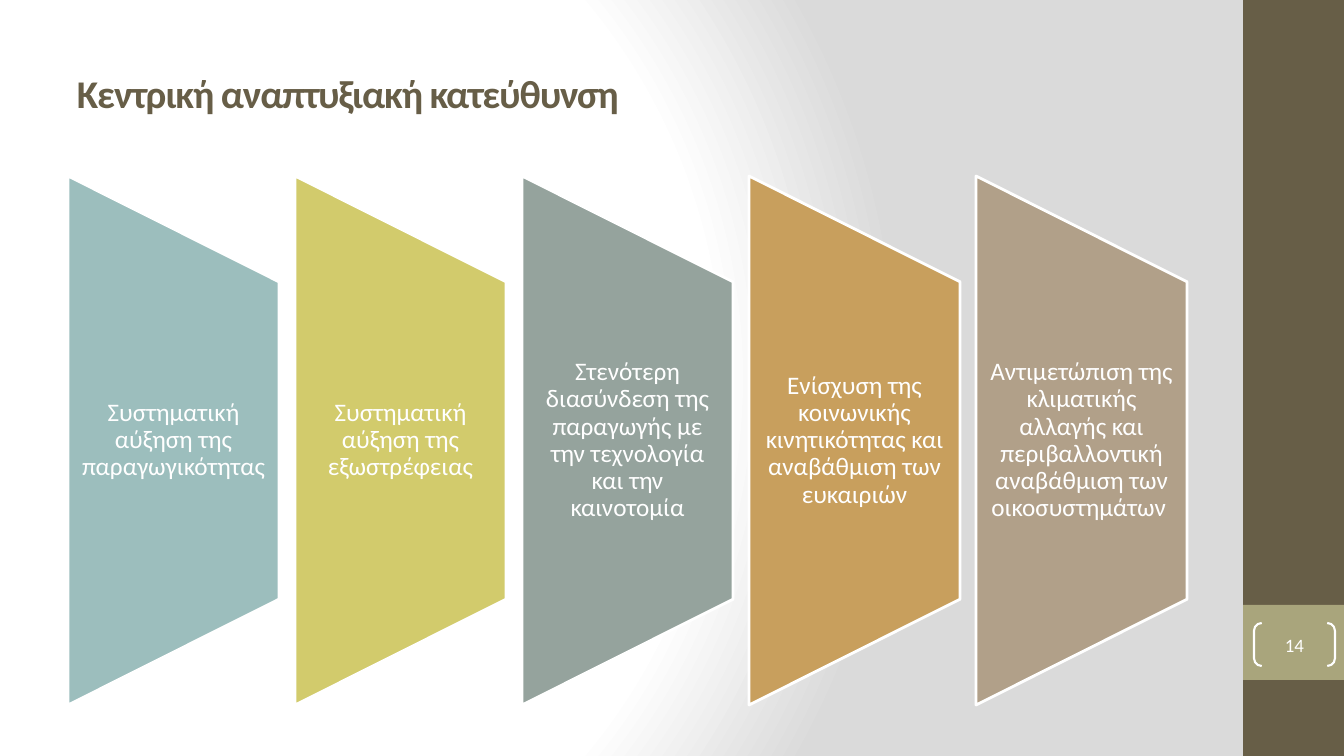
import pptx
import pptx.util
import pptx.dml.color
import pptx.enum.shapes
import pptx.enum.text
import pptx.oxml
import pptx.oxml.ns

PX = 914400 / 100.8
SHAPES = pptx.enum.shapes.MSO_SHAPE
CENTER = pptx.enum.text.PP_ALIGN.CENTER
MIDDLE = pptx.enum.text.MSO_ANCHOR.MIDDLE
DIRECTIONS = [
    ("9CBEBD", "Συστηματική αύξηση της παραγωγικότητας"),
    ("D2CB6C", "Συστηματική αύξηση της εξωστρέφειας"),
    ("95A39D", "Στενότερη διασύνδεση της παραγωγής με την τεχνολογία και την καινοτομία"),
    ("C89F5D", "Ενίσχυση της κοινωνικής κινητικότητας και αναβάθμιση των ευκαιριών"),
    ("B1A089", "Αντιμετώπιση της κλιματικής αλλαγής και περιβαλλοντική αναβάθμιση των οικοσυστημάτων "),
]


def px(n):
    return pptx.util.Emu(round(n * PX))


def color(value):
    return pptx.dml.color.RGBColor.from_string(value)


def add_box(s, kind, x, y, w, h, fill=None, line=None, line_pt=1):
    sp = s.shapes.add_shape(kind, px(x), px(y), px(w), px(h))
    sp.shadow.inherit = False
    if fill:
        sp.fill.solid()
        sp.fill.fore_color.rgb = color(fill)
    else:
        sp.fill.background()
    if line:
        sp.line.color.rgb = color(line)
        sp.line.width = pptx.util.Pt(line_pt)
    else:
        sp.line.fill.background()
    return sp


def set_text(sp, text, size, ink, inset_x, inset_y, align=None):
    tf = sp.text_frame
    tf.word_wrap = True
    tf.vertical_anchor = MIDDLE
    tf.margin_left = tf.margin_right = px(inset_x)
    tf.margin_top = tf.margin_bottom = px(inset_y)
    p = tf.paragraphs[0]
    p.text = text
    p.alignment = align
    r = p.runs[0]
    r.font.size = pptx.util.Pt(size)
    r.font.name = "Calibri"
    r.font.color.rgb = color(ink)
    return p


def add_background(s):
    s.background.fill.solid()
    solid = s.element.find(".//" + pptx.oxml.ns.qn("p:bgPr"))[0]
    stops = "".join(
        f'<a:gs pos="{pos}000"><a:srgbClr val="{value}"/></a:gs>'
        for pos, value in [(0, "FFFFFF"), (75, "FFFFFF"), (100, "DADADA")]
    )
    gradient = pptx.oxml.parse_xml(
        f'<a:gradFill {pptx.oxml.ns.nsdecls("a")} rotWithShape="1"><a:gsLst>{stops}</a:gsLst>'
        '<a:path path="circle"><a:fillToRect l="20000" t="50000" r="100000" b="50000"/></a:path>'
        '</a:gradFill>'
    )
    solid.getparent().replace(solid, gradient)


def add_title(s, x, y, w, h):
    sp = s.shapes.add_textbox(px(x), px(y), px(w), px(h))
    p = set_text(sp, "Κεντρική αναπτυξιακή κατεύθυνση", 28, "675E47", 10, 5)
    font = p.runs[0].font
    font.bold = True
    p.runs[0]._r.get_or_add_rPr().set("spc", "-80")


def add_direction(s, x, y, w, h, fill, text):
    sp = add_box(s, SHAPES.FLOWCHART_MANUAL_OPERATION, x + (w - h) / 2, y + (h - w) / 2, h, w,
                 fill, "FFFFFF", 2)
    sp.rotation = 270
    label = s.shapes.add_textbox(px(x), px(y + h / 5), px(w), px(h * 3 / 5))
    p = set_text(label, text, 18, "FFFFFF", 12, 0, CENTER)
    p.line_spacing = 0.9


def add_directions(s, x, y, w, h):
    gap = 16
    column = (w - gap * (len(DIRECTIONS) - 1)) / len(DIRECTIONS)
    for i, (fill, text) in enumerate(DIRECTIONS):
        add_direction(s, x + i * (column + gap), y, column, h, fill, text)


def add_sidebar(s, x, y, w, h):
    add_box(s, SHAPES.RECTANGLE, x, y, w, h, "675E47")
    add_box(s, SHAPES.RECTANGLE, x, y + 605, w, 75, "A9A57C")
    sp = add_box(s, SHAPES.DOUBLE_BRACKET, x + 11, y + 623, 81, 43, None, "FFFFFF", 1.5)
    sp.adjustments[0] = 0.18
    set_text(sp, "14", 13.5, "FFFFFF", 0, 0, CENTER)


def main():
    prs = pptx.Presentation()
    prs.slide_width, prs.slide_height = px(1344), px(756)
    s = prs.slides.add_slide(prs.slide_layouts[6])
    add_background(s)
    add_sidebar(s, 1243, 0, 101, 756)
    add_title(s, 67, 30, 1120, 126)
    add_directions(s, 68, 176, 1119, 529)
    prs.save("out.pptx")


if __name__ == "__main__":
    main()
